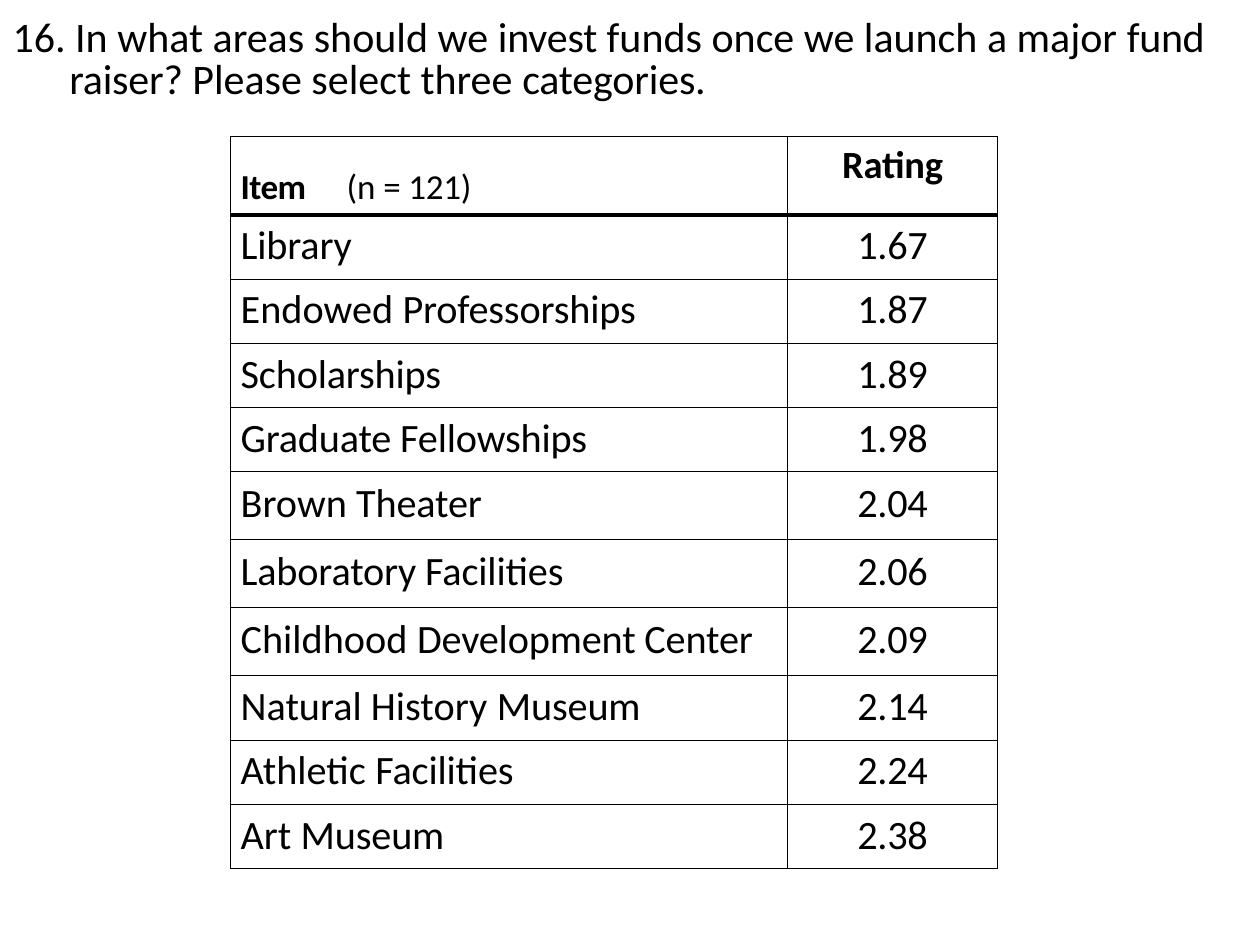
from lxml.etree import SubElement
from pptx import Presentation
from pptx.dml.color import RGBColor
from pptx.enum.text import MSO_ANCHOR, MSO_AUTO_SIZE, PP_ALIGN
from pptx.oxml import parse_xml
from pptx.oxml.ns import nsdecls, qn
from pptx.util import Inches, Pt

BLACK = RGBColor(0, 0, 0)
THIN, THICK = 0.75, 3
TITLE = [("16. In what areas should we ", 0), ("invest ", -10),
         ("funds once we launch a major ", 0), ("fund ", -20), ("raiser? ", -10),
         ("Please select three ", 0), ("categories.", -10)]
RATINGS = [("", "Library", "1.67"), ("Endowed ", "Professorships", "1.87"),
           ("", "Scholarships", "1.89"), ("", "Graduate Fellowships", "1.98"),
           ("Brown ", "Theater", "2.04"), ("", "Laboratory Facilities", "2.06"),
           ("Childhood ", "Development Center", "2.09"),
           ("Natural History ", "Museum", "2.14"),
           ("Athletic ", "Facilities", "2.24"), ("Art ", "Museum", "2.38")]
TALL_ROWS = (5, 6, 7)


def add_runs(p, runs, size, bold=False):
    """Add (text, letter spacing in 1/100 pt) runs to a paragraph."""
    for text, spacing in runs:
        if not text:
            continue
        r = p.add_run()
        r.text = text
        fmt = {"name": "Calibri", "size": Pt(size), "bold": bold}
        for key, value in fmt.items():
            setattr(r.font, key, value)
        r.font.color.rgb = BLACK
        r.font._element.set("spc", str(spacing))


def add_border(cell, side, width):
    """Draw one solid black edge of a cell."""
    cell._tc.get_or_add_tcPr().append(parse_xml(
        f'<a:ln{side} {nsdecls("a")} w="{Pt(width)}"><a:solidFill>'
        f'<a:srgbClr val="{BLACK}"/></a:solidFill></a:ln{side}>'))


prs = Presentation()
prs.slide_width, prs.slide_height = Inches(10), Inches(7.5)
s = prs.slides.add_slide(prs.slide_layouts[5])

# Question with a hanging indent
title = s.shapes.title
box = {"left": 0.09, "top": 0.07, "width": 9.64, "height": 0.76}
for key, value in box.items():
    setattr(title, key, Inches(value))
tf = title.text_frame
frame = {"margin_left": 0, "margin_top": Inches(0.08), "margin_right": 0,
         "margin_bottom": 0, "word_wrap": True, "vertical_anchor": MSO_ANCHOR.TOP,
         "auto_size": MSO_AUTO_SIZE.SHAPE_TO_FIT_TEXT}
for key, value in frame.items():
    setattr(tf, key, value)
p = tf.paragraphs[0]
p.alignment, p.line_spacing = PP_ALIGN.LEFT, Pt(24)
pPr = p._p.get_or_add_pPr()
pPr.set("marL", str(Inches(0.46)))
pPr.set("indent", str(Inches(-0.45)))
add_runs(p, TITLE, 24)

# Ratings table
rows = len(RATINGS) + 1
table = s.shapes.add_table(rows, 2, Inches(1.83), Inches(1.08),
                           Inches(6.08), Inches(5.68)).table
table.first_row = table.horz_banding = False
for column, width in zip(table.columns, (4.42, 1.67)):
    column.width = Inches(width)

for i, row in enumerate(table.rows):
    tall = i in TALL_ROWS
    row.height = Inches(0.54 if tall else 0.51)
    for j, cell in enumerate(row.cells):
        layout = {"margin_left": 0, "margin_top": Inches(0.06 if tall else 0.05),
                  "margin_right": 0, "margin_bottom": 0,
                  "vertical_anchor": MSO_ANCHOR.TOP}
        for key, value in layout.items():
            setattr(cell, key, value)
        edges = {"L": THIN, "R": THIN, "T": THICK if i == 1 else THIN,
                 "B": THICK if i == 0 else THIN}
        for side, width in edges.items():
            add_border(cell, side, width)
        cell.fill.background()

        p = cell.text_frame.paragraphs[0]
        if j == 0:
            p._p.get_or_add_pPr().set("marL", str(Inches(0.08)))
        else:
            p.alignment = PP_ALIGN.CENTER
        if i > 0:
            first, last, rating = RATINGS[i - 1]
            runs = [(rating, -20)] if j else [(first, 0), (last, -10)]
            add_runs(p, runs, 23)
        elif j:
            add_runs(p, [("Rating", -10)], 22, bold=True)
        else:
            tabs = SubElement(p._p.get_or_add_pPr(), qn("a:tabLst"))
            SubElement(tabs, qn("a:tab"), pos=str(Inches(0.84)), algn="l")
            add_runs(p, [("Item\t", -30)], 34.5, bold=True)
            p.runs[0].font._element.set("baseline", "1000")
            add_runs(p, [("(n =", 0), (" 121)", -20)], 20)

prs.save("out.pptx")
